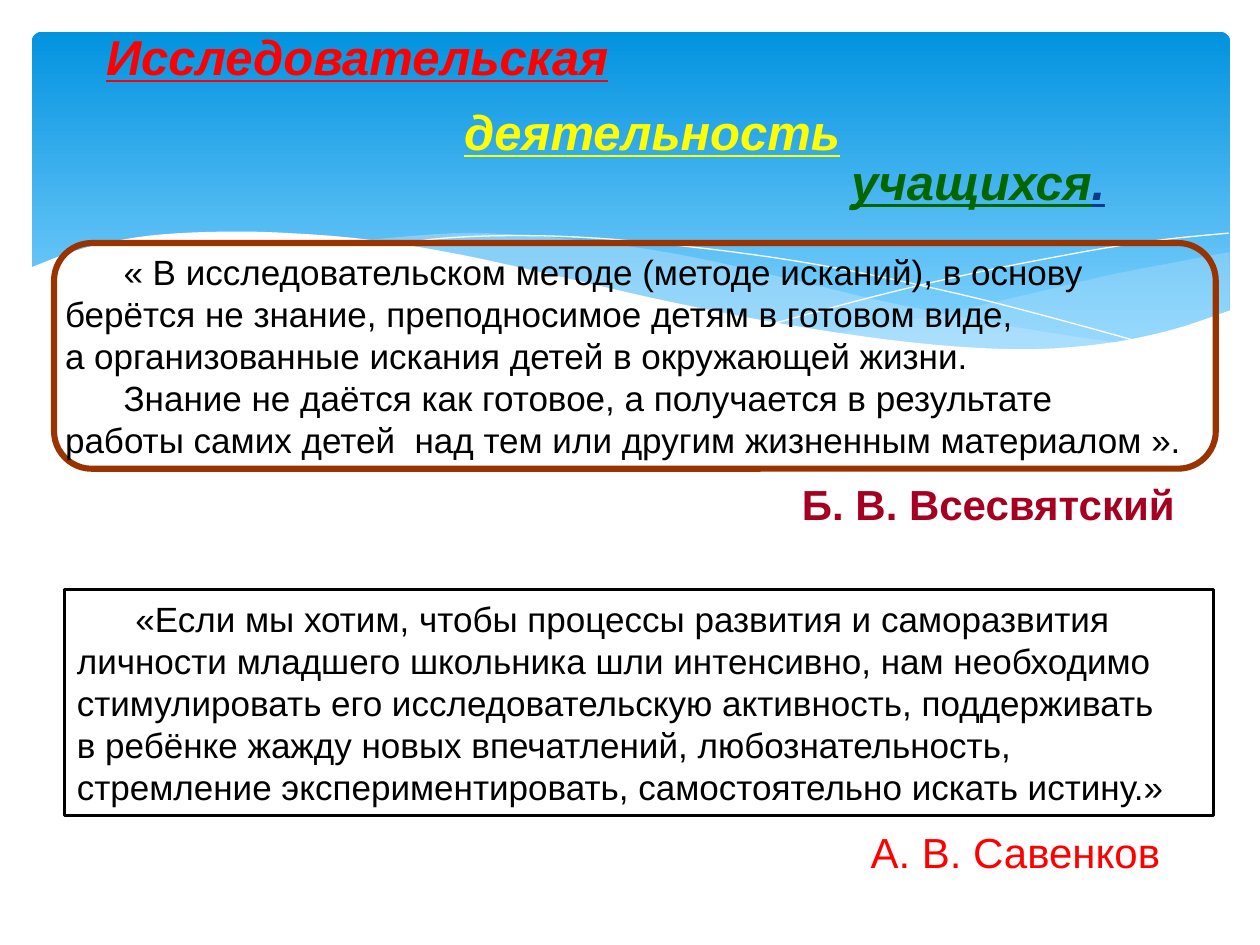
"""Build the slide about pupils' research activity."""
from dataclasses import dataclass

from lxml.etree import SubElement
from pptx import Presentation
from pptx.dml.color import RGBColor
from pptx.enum.shapes import MSO_SHAPE
from pptx.enum.text import MSO_ANCHOR, MSO_AUTO_SIZE, PP_ALIGN
from pptx.oxml.ns import qn
from pptx.util import Cm, Pt

COLORS = {
    "sky": "0293E0", "pale sky": "83D3FE", "mist": "C6E7FC", "white": "FFFFFF",
    "black": "000000", "red": "FF0000", "yellow": "FFFF00", "green": "006600",
    "navy": "073E87", "crimson": "A50021", "brown": "993300",
}
FIRST_LINE_INDENT = Cm(1.18)
CURVE_STEPS = 5
Point = tuple[float, float]


@dataclass
class Wave:
    curves: list[list[Point]]
    color: str
    opacity: int = 100
    closed: bool = True


@dataclass
class Label:
    text: str
    box: tuple[float, float, float, float]
    color: str
    size: int = 28
    heading: bool = True
    bold: bool = True
    align: PP_ALIGN = PP_ALIGN.CENTER


@dataclass
class Quote:
    lines: list[str]
    indented: tuple[int, ...]
    box: tuple[float, float, float, float]


WAVES = [
    Wave([[(24.79, 5.08), (22.63, 5.49), (21.87, 5.66), (19.13, 6.3), (16.79, 6.73)],
          [(16.79, 6.73), (18.26, 6.91), (19.84, 7.04), (21.21, 7.04), (22.58, 6.91),
           (23.75, 6.65), (24.79, 6.27)]], "mist", 29),
    Wave([[(22.68, 6.93), (20.5, 6.6), (17.93, 6.1), (15.98, 5.64), (14.1, 5.21),
           (12.42, 4.93), (10.67, 4.75), (9.17, 4.7), (7.26, 4.85)],
          [(7.26, 4.85), (9.19, 5.16), (11.4, 5.64), (13.46, 6.1), (15.7, 6.55),
           (17.65, 6.86), (19.33, 7.04), (20.78, 7.06), (22.68, 6.93)]], "mist", 40),
    Wave([[(7.85, 4.95), (8.97, 4.8), (10.57, 4.75), (12.42, 4.83), (14.78, 5.08),
           (16.89, 5.41), (19.3, 5.92), (21.11, 6.38), (23.04, 6.91)]],
         "white", closed=False),
    Wave([[(15.57, 6.53), (17.65, 5.97), (19.71, 5.49), (22, 5.05), (23.47, 4.83),
           (24.77, 4.7)]], "white", closed=False),
    Wave([[(24.82, 6.25), (23.62, 6.65), (22.23, 6.93), (20.55, 7.04), (18.44, 6.91),
           (15.9, 6.55), (13.44, 6.07), (11.35, 5.59), (9.27, 5.13), (7.42, 4.83),
           (5.84, 4.7), (4.5, 4.67), (3.02, 4.75), (1.7, 5), (0.58, 5.41)],
          [(0.58, 8.36), (24.82, 8.36)]], "white"),
]
TITLE = Label("Исследовательская", (1.88, 0.41, 10.64, 1.45), "red")
SECOND_WORD = Label("деятельность", (9.07, 1.93, 8.15, 1.45), "yellow")
THIRD_WORD = Label("учащихся", (16.89, 2.92, 5.66, 1.45), "green")
AUTHORS = [
    Label("Б. В. Всесвятский", (15.9, 9.53, 8.05, 1.27), "crimson", 24, heading=False),
    Label("А. В. Савенков", (17.3, 16.54, 6.5, 1.27), "red", 24, heading=False,
          bold=False, align=PP_ALIGN.LEFT),
]
METHOD_QUOTE = Quote([
    "« В исследовательском методе (методе исканий), в основу",
    "берётся не знание, преподносимое детям в готовом виде,",
    "а организованные искания детей в окружающей жизни.",
    "Знание не даётся как готовое, а получается в результате",
    "работы самих детей  над тем или другим жизненным материалом ».",
], (0, 3), (1.09, 4.9, 23.42, 4.55))
ACTIVITY_QUOTE = Quote([
    "«Если мы хотим, чтобы процессы развития и саморазвития",
    "личности младшего школьника шли интенсивно, нам необходимо",
    "стимулировать его исследовательскую активность, поддерживать",
    "в ребёнке жажду новых впечатлений, любознательность, "
    "стремление экспериментировать, самостоятельно искать истину.»",
], (0,), (1.3, 11.89, 23.16, 4.55))


def color(name: str) -> RGBColor:
    return RGBColor.from_string(COLORS[name])


def smooth(knots: list[Point]) -> list[Point]:
    """Return points of a Catmull-Rom curve through the knots."""
    padded = [knots[0], *knots, knots[-1]]
    points = [knots[0]]
    for a, b, c, d in zip(padded, padded[1:], padded[2:], padded[3:]):
        for step in range(1, CURVE_STEPS + 1):
            t = step / CURVE_STEPS
            points.append(tuple(
                (2 * q + (r - p) * t + (2 * p - 5 * q + 4 * r - s) * t ** 2
                 + (3 * q - p - 3 * r + s) * t ** 3) / 2
                for p, q, r, s in zip(a, b, c, d)))
    return points


def add_wave(page, wave: Wave) -> None:
    points = [(Cm(x), Cm(y)) for curve in wave.curves for x, y in smooth(curve)]
    builder = page.shapes.build_freeform(*points[0])
    builder.add_line_segments(points[1:], close=wave.closed)
    shape = builder.convert_to_shape()
    shape.shadow.inherit = False
    if not wave.closed:
        shape.fill.background()
        shape.line.color.rgb = color(wave.color)
        shape.line.width = Pt(0)
        return
    shape.line.fill.background()
    shape.fill.solid()
    shape.fill.fore_color.rgb = color(wave.color)
    if wave.opacity < 100:
        tint = shape.element.spPr.find(qn("a:solidFill"))[0]
        SubElement(tint, qn("a:alpha"), val=str(wave.opacity * 1000))


def add_sky(page) -> None:
    sky = page.shapes.add_shape(MSO_SHAPE.ROUNDED_RECTANGLE,
                                Cm(0.64), Cm(0.64), Cm(24.16), Cm(6.86))
    sky.adjustments[0] = 0.03
    sky.shadow.inherit = False
    sky.line.fill.background()
    sky.fill.gradient()
    sky.fill.gradient_angle = 270
    for stop, name, position in zip(sky.fill.gradient_stops, ("sky", "pale sky"), (0, 0.9)):
        stop.color.rgb = color(name)
        stop.position = position


def add_span(paragraph, text: str, *, size: int, fill: str, bold: bool = False,
             heading: bool = False) -> None:
    span = paragraph.add_run()
    span.text = text
    font = span.font
    font.name, font.size, font.bold = "Arial", Pt(size), bold
    font.italic = font.underline = heading
    font.color.rgb = color(fill)


def fill_label(box, label: Label):
    """Place a box, write the label in it and return its paragraph."""
    box.left, box.top, box.width, box.height = map(Cm, label.box)
    frame = box.text_frame
    frame.auto_size = MSO_AUTO_SIZE.NONE
    frame.word_wrap = label.align == PP_ALIGN.LEFT
    frame.vertical_anchor = MSO_ANCHOR.TOP
    paragraph = frame.paragraphs[0]
    paragraph.alignment = label.align
    add_span(paragraph, label.text, size=label.size, fill=label.color,
             bold=label.bold, heading=label.heading)
    return paragraph


def add_label(page, label: Label):
    return fill_label(page.shapes.add_textbox(*map(Cm, label.box)), label)


def add_quote(page, quote: Quote, kind: MSO_SHAPE, line: str, width: float) -> None:
    box = page.shapes.add_shape(kind, *map(Cm, quote.box))
    box.shadow.inherit = False
    box.fill.background()
    box.line.color.rgb = color(line)
    box.line.width = Pt(width)
    write_quote(box, quote)


def write_quote(box, quote: Quote) -> None:
    frame = box.text_frame
    frame.word_wrap = True
    frame.vertical_anchor = MSO_ANCHOR.MIDDLE
    if box.adjustments:
        frame.margin_left = frame.margin_right = Cm(0)
    for index, text in enumerate(quote.lines):
        paragraph = frame.add_paragraph() if index else frame.paragraphs[0]
        paragraph.alignment = PP_ALIGN.LEFT
        if index in quote.indented:
            paragraph._p.get_or_add_pPr().set("indent", str(FIRST_LINE_INDENT))
        add_span(paragraph, text, size=20, fill="black")


def main() -> None:
    deck = Presentation()
    deck.slide_width, deck.slide_height = Cm(25.4), Cm(19.05)
    page = deck.slides.add_slide(deck.slide_layouts[5])
    add_sky(page)
    for wave in WAVES:
        add_wave(page, wave)
    title = page.shapes.title
    page.shapes.element.append(title.element)
    fill_label(title, TITLE)
    add_label(page, SECOND_WORD)
    add_span(add_label(page, THIRD_WORD), ".", size=28, fill="navy", bold=True, heading=True)
    add_quote(page, METHOD_QUOTE, MSO_SHAPE.ROUNDED_RECTANGLE, "brown", 3.5)
    add_quote(page, ACTIVITY_QUOTE, MSO_SHAPE.RECTANGLE, "black", 1.75)
    for author in AUTHORS:
        add_label(page, author)
    deck.save("out.pptx")


if __name__ == "__main__":
    main()
